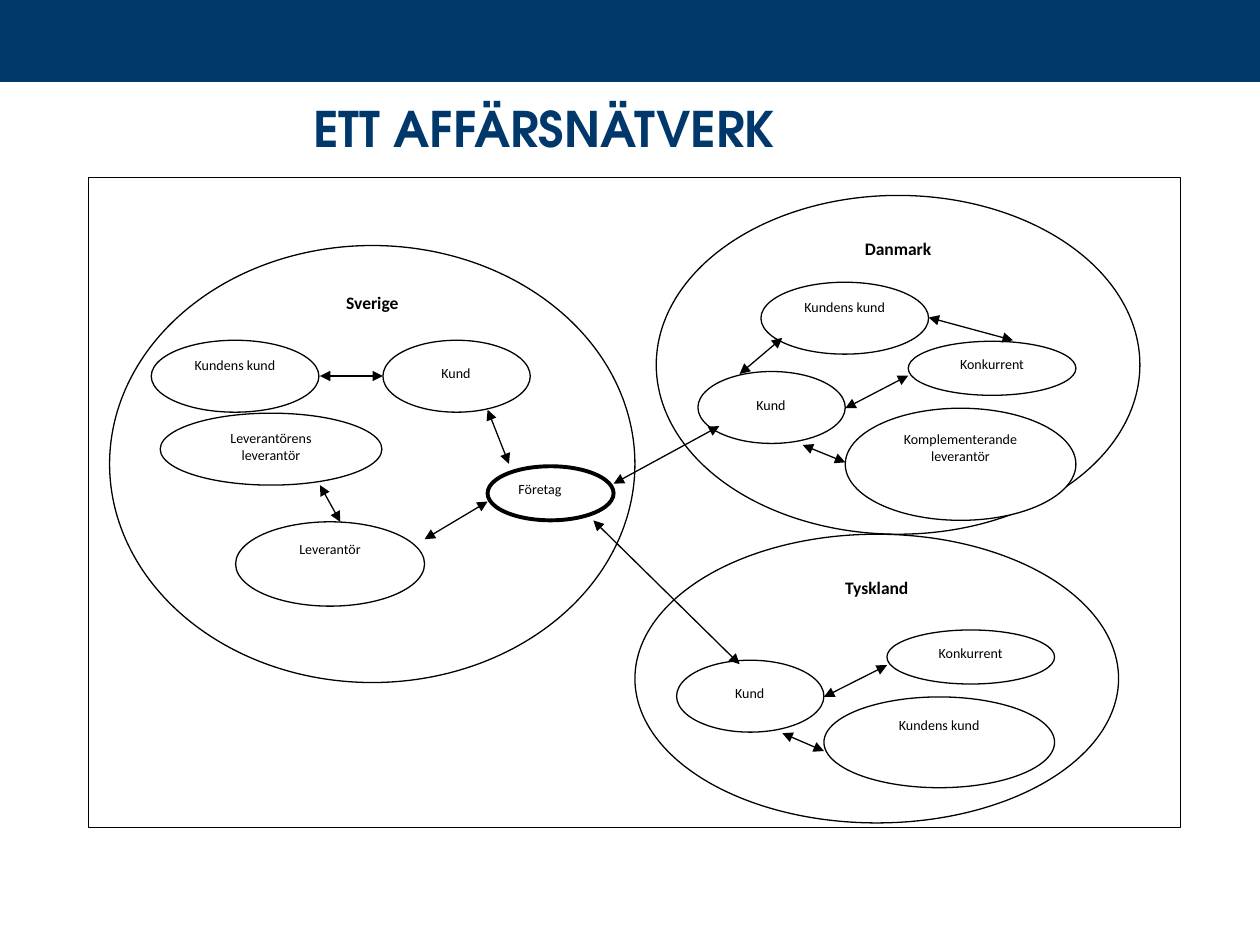
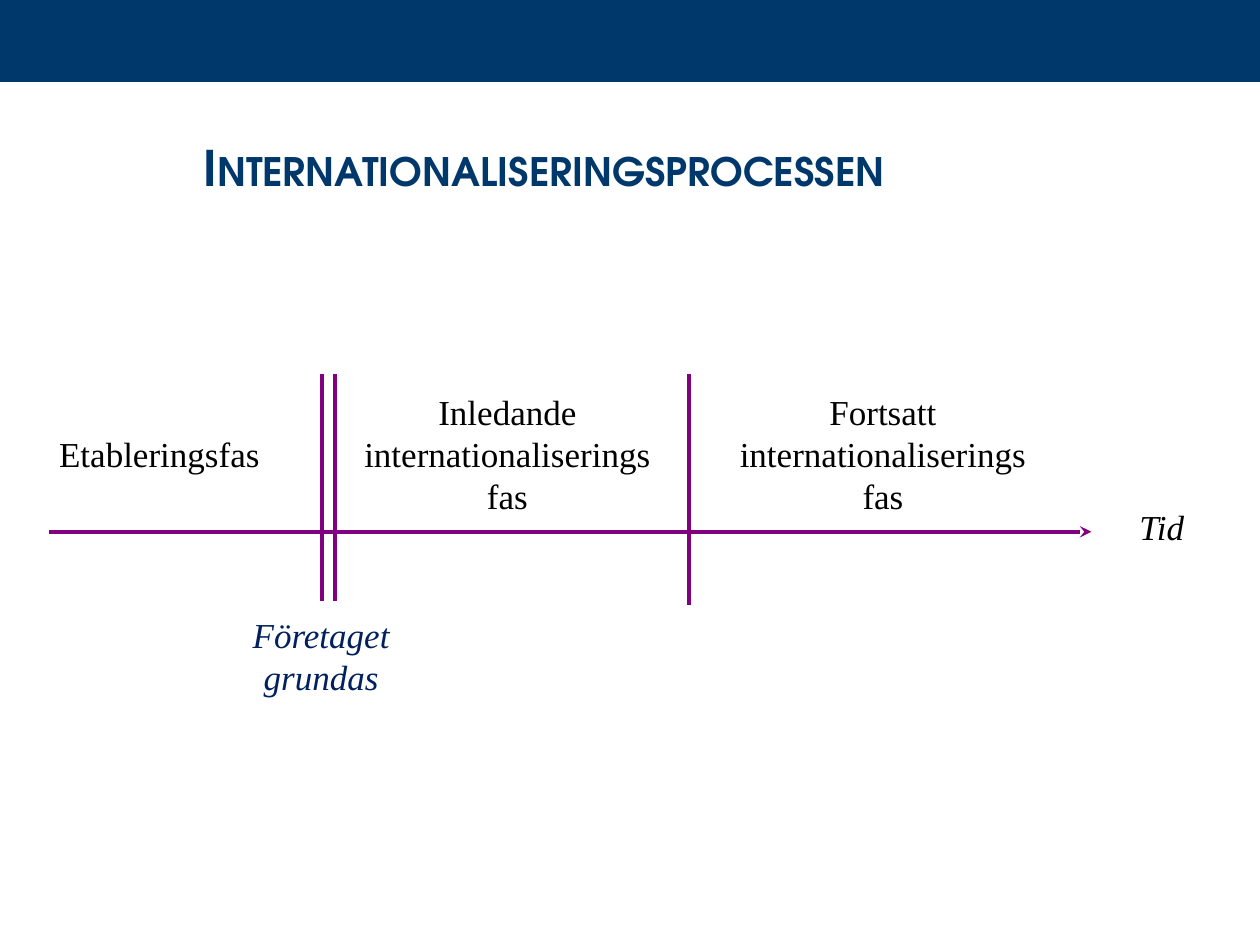
"""Build two slides on business networks and internationalisation."""
from dataclasses import dataclass
from typing import NamedTuple, Optional

from lxml.etree import SubElement
from pptx import Presentation
from pptx.dml.color import RGBColor
from pptx.enum.shapes import MSO_CONNECTOR as Link, MSO_SHAPE as Preset
from pptx.enum.text import MSO_ANCHOR as Anchor, PP_ALIGN as Align
from pptx.oxml.ns import qn
from pptx.util import Cm, Pt

COLOURS = {
    "navy": "00386B",
    "deep": "002060",
    "purple": "800080",
    "black": "000000",
    "white": "FFFFFF",
}
PAGE_WIDTH, PAGE_HEIGHT = 25.4, 19.05
LABEL_WIDTH = 5.51


class Area(NamedTuple):
    left: float
    top: float
    width: float
    height: float


class Route(NamedTuple):
    x1: float
    y1: float
    x2: float
    y2: float


@dataclass(frozen=True)
class Style:
    font: str
    size: float
    colour: str = "black"
    bold: bool = False
    italic: bool = False
    small_caps: bool = False
    align: Align = Align.CENTER
    anchor: Anchor = Anchor.TOP
    wrap: bool = True
    space_after: float = 0


@dataclass(frozen=True)
class Actor:
    name: str
    area: Area


@dataclass(frozen=True)
class Country:
    name: str
    area: Area
    label_top: float
    label_height: float
    customer: tuple[float, float]
    actors: list[Actor]


@dataclass(frozen=True)
class Caption:
    lines: list[str]
    area: Area
    style: Style


TITLE = Style("TeX Gyre Adventor", 28, "navy", bold=True, anchor=Anchor.MIDDLE)
SMALL_CAPS_TITLE = Style("TeX Gyre Adventor", 28, "navy", bold=True,
                         small_caps=True, anchor=Anchor.MIDDLE)
COUNTRY = Style("Calibri", 10, bold=True, space_after=10)
ACTOR = Style("Calibri", 8, space_after=10)
COMPANY = Style("Calibri", 8, align=Align.LEFT, space_after=10)
PHASE = Style("Times New Roman", 20, anchor=Anchor.MIDDLE, wrap=False)
FOUNDING = Style("Times New Roman", 20, "deep", italic=True,
                 anchor=Anchor.MIDDLE, wrap=False)
TIME = Style("Times New Roman", 20, italic=True, anchor=Anchor.MIDDLE, wrap=False)

COUNTRIES = [
    Country("Sverige", Area(2.21, 4.95, 10.59, 8.81), 5.77, 0.74, (7.72, 6.86), [
        Actor("Leverantör", Area(4.75, 10.52, 3.81, 1.7)),
        Actor("Leverantörens leverantör", Area(3.23, 8.33, 4.47, 1.45)),
        Actor("Kundens kund", Area(3.05, 6.86, 3.38, 1.45)),
    ]),
    Country("Danmark", Area(13.23, 3.94, 9.75, 6.83), 4.67, 1.09, (14.07, 7.49), [
        Actor("Komplementerande leverantör", Area(17.04, 8.23, 4.65, 2.26)),
        Actor("Kundens kund", Area(15.34, 5.69, 3.38, 1.45)),
        Actor("Konkurrent", Area(18.31, 6.88, 3.38, 1.09)),
    ]),
    Country("Tyskland", Area(12.8, 10.77, 9.75, 5.82), 11.51, 1.17, (13.64, 13.31), [
        Actor("Kundens kund", Area(16.61, 14.05, 4.65, 1.83)),
        Actor("Konkurrent", Area(17.88, 12.7, 3.38, 1.09)),
    ]),
]
RELATIONS = [
    Route(6.45, 9.78, 6.86, 10.52),
    Route(8.56, 10.87, 9.83, 10.11),
    Route(6.45, 7.58, 7.72, 7.58),
    Route(10.26, 9.35, 9.83, 8.26),
    Route(12.37, 9.75, 14.5, 8.59),
    Route(11.96, 10.49, 14.91, 13.39),
    Route(16.18, 8.97, 17.04, 9.32),
    Route(17.04, 8.23, 18.31, 7.57),
    Route(18.72, 6.4, 20.42, 6.86),
    Route(14.91, 7.54, 15.77, 6.81),
    Route(15.77, 14.78, 16.61, 15.14),
    Route(16.61, 14.05, 17.88, 13.41),
]
CAPTIONS = [
    Caption(["Företaget", "grundas"], Area(4.48, 12.12, 3.99, 2.18), FOUNDING),
    Caption(["Inledande", "internationaliserings", "fas"],
            Area(6.93, 7.75, 6.6, 2.77), PHASE),
    Caption(["Fortsatt", "internationaliserings", "fas"],
            Area(14.5, 7.75, 6.6, 2.77), PHASE),
    Caption(["Etableringsfas"], Area(0.37, 7.75, 5.69, 2.77), PHASE),
    Caption(["Tid"], Area(22.02, 9.53, 2.8, 2.18), TIME),
]


def colour(name: str) -> RGBColor:
    """Look up a named colour."""
    return RGBColor.from_string(COLOURS[name])


def write(box, lines: list[str], style: Style) -> None:
    """Fill a box with one paragraph per line."""
    frame = box.text_frame
    frame.word_wrap = style.wrap
    frame.vertical_anchor = style.anchor
    for index, line in enumerate(lines):
        para = frame.add_paragraph() if index else frame.paragraphs[0]
        para.alignment = style.align
        para.space_after = Pt(style.space_after)
        span = para.add_run()
        span.text = line
        span.font.name = style.font
        span.font.size = Pt(style.size)
        span.font.bold = style.bold
        span.font.italic = style.italic
        span.font.color.rgb = colour(style.colour)
        if style.small_caps:
            span.font._element.set("cap", "small")


def add_box(page, preset: Preset, area: Area, fill: str = "white",
            line_width: float = 0, lines: Optional[list[str]] = None,
            style: Style = ACTOR) -> None:
    """Draw a filled shape, with an outline and text if given."""
    box = page.shapes.add_shape(preset, *map(Cm, area))
    box.shadow.inherit = False
    box.fill.solid()
    box.fill.fore_color.rgb = colour(fill)
    if line_width:
        box.line.color.rgb = colour("black")
        box.line.width = Pt(line_width)
    else:
        box.line.fill.background()
    if lines:
        write(box, lines, style)


def add_line(page, route: Route, line_colour: str, width: float,
             head: str = "", tail: str = "") -> None:
    """Draw a straight connector with optional arrowheads."""
    line = page.shapes.add_connector(Link.STRAIGHT, *map(Cm, route))
    line.line.color.rgb = colour(line_colour)
    line.line.width = Pt(width)
    outline = line.line._get_or_add_ln()
    for tag, kind in (("a:headEnd", head), ("a:tailEnd", tail)):
        if kind:
            SubElement(outline, qn(tag), type=kind)
    SubElement(line._element.spPr, qn("a:effectLst"))


def add_page(deck, title: str, title_top: float, style: Style):
    """Add a blank page with the band and the title."""
    page = deck.slides.add_slide(deck.slide_layouts[6])
    add_box(page, Preset.RECTANGLE, Area(0, 0, PAGE_WIDTH, 1.65), "navy")
    box = page.shapes.add_textbox(Cm(1.45), Cm(title_top), Cm(19.05), Cm(3.18))
    write(box, [title], style)
    return page


def add_country(page, country: Country) -> None:
    """Draw a country with its label, customer and other actors."""
    area = country.area
    add_box(page, Preset.OVAL, area, line_width=0.75)
    label = Area(area.left + (area.width - LABEL_WIDTH) / 2, country.label_top,
                 LABEL_WIDTH, country.label_height)
    add_box(page, Preset.RECTANGLE, label, lines=[country.name], style=COUNTRY)
    for actor in country.actors:
        add_box(page, Preset.OVAL, actor.area, line_width=0.75, lines=[actor.name])
    left, top = country.customer
    add_box(page, Preset.OVAL, Area(left, top, 2.97, 1.45), line_width=0.75)
    add_box(page, Preset.RECTANGLE, Area(left + 0.42, top + 0.37, 2.11, 0.74),
            lines=["Kund"])


def build_network(deck) -> None:
    """Build the page with the business network."""
    page = add_page(deck, "ETT AFFÄRSNÄTVERK", 0.99, TITLE)
    add_box(page, Preset.RECTANGLE, Area(1.78, 3.58, 22.02, 13.11), line_width=0.75)
    for country in COUNTRIES:
        add_country(page, country)
    add_box(page, Preset.OVAL, Area(9.83, 9.4, 2.54, 1.09), line_width=2.25,
            lines=["Företag"], style=COMPANY)
    for route in RELATIONS:
        add_line(page, route, "black", 0.75, "triangle", "triangle")


def build_process(deck) -> None:
    """Build the page with the timeline of phases."""
    page = add_page(deck, "Internationaliseringsprocessen", 1.78, SMALL_CAPS_TITLE)
    add_line(page, Route(0.99, 10.72, 22, 10.72), "purple", 2.25, tail="stealth")
    for x in (6.5, 6.76, 13.89):
        add_line(page, Route(x, 7.54, x, 12.19), "purple", 2.25)
    for caption in CAPTIONS:
        add_box(page, Preset.RECTANGLE, caption.area, lines=caption.lines,
                style=caption.style)


def main() -> None:
    """Build and save the deck."""
    deck = Presentation()
    deck.slide_width, deck.slide_height = Cm(PAGE_WIDTH), Cm(PAGE_HEIGHT)
    build_network(deck)
    build_process(deck)
    deck.save("out.pptx")


if __name__ == "__main__":
    main()
